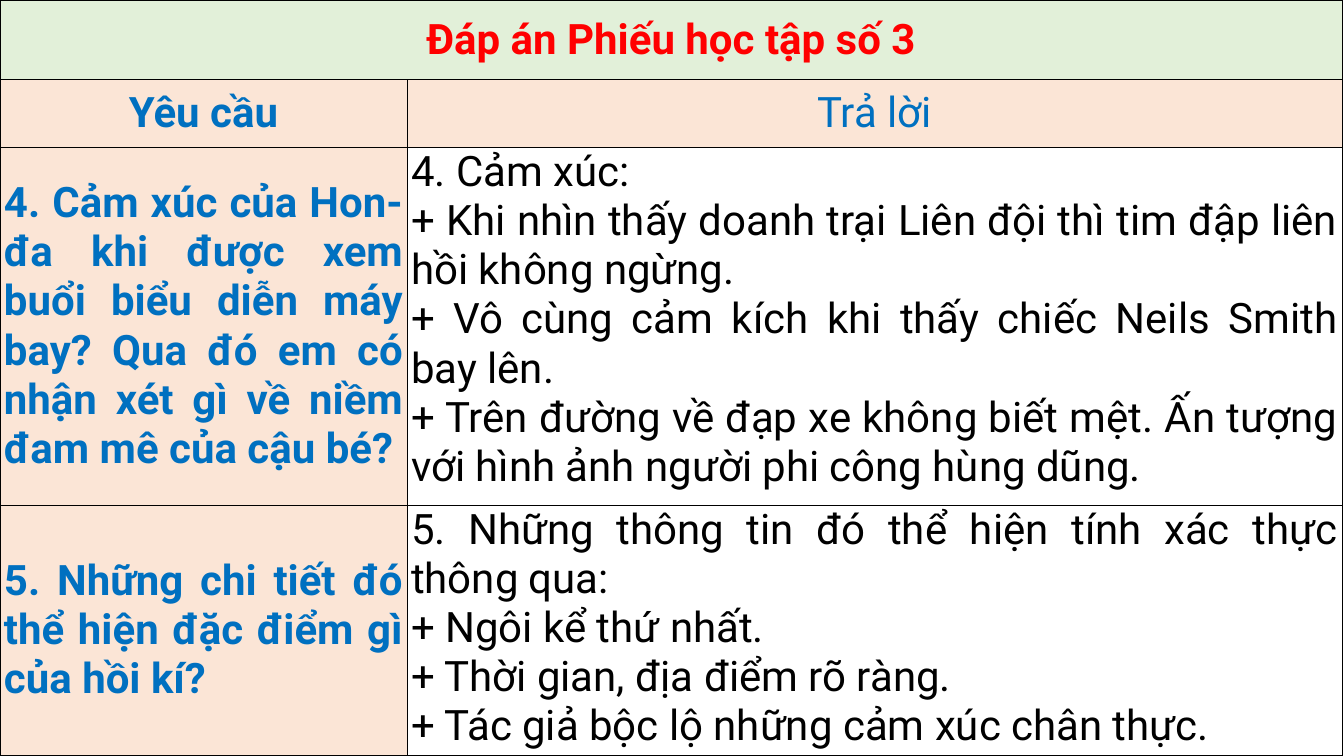
from pptx import Presentation
from pptx.dml.color import RGBColor
from pptx.enum.text import MSO_ANCHOR as ANCHOR, PP_ALIGN as ALIGN
from pptx.oxml import parse_xml
from pptx.oxml.ns import nsdecls
from pptx.util import Cm, Pt

RED, BLUE, BLACK, WHITE = "FF0000", "0070C0", "000000", "FFFFFF"
GREEN_FILL, PEACH_FILL = "E2F0D9", "FBE5D6"

# Cell formats: fill, font colour, bold, alignment, anchor
TITLE = (GREEN_FILL, RED, True, ALIGN.CENTER, ANCHOR.MIDDLE)
HEAD_LEFT = (PEACH_FILL, BLUE, True, ALIGN.CENTER, ANCHOR.MIDDLE)
HEAD_RIGHT = (PEACH_FILL, BLUE, False, ALIGN.CENTER, ANCHOR.MIDDLE)
QUESTION = (PEACH_FILL, BLUE, True, ALIGN.JUSTIFY, ANCHOR.MIDDLE)
ANSWER = (WHITE, BLACK, False, ALIGN.JUSTIFY, ANCHOR.TOP)

HEADING = "Đáp án Phiếu học tập số 3"
ROWS = [
    [(HEAD_LEFT, ["Yêu cầu"]), (HEAD_RIGHT, ["Trả lời"])],
    [(QUESTION, ["4. Cảm xúc của Hon-đa khi được xem buổi biểu diễn máy bay? "
                 "Qua đó em có nhận xét gì về niềm đam mê của cậu bé?"]),
     (ANSWER, ["4. Cảm xúc:",
               "+ Khi nhìn thấy doanh trại Liên đội thì tim đập liên hồi không ngừng.",
               "+ Vô cùng cảm kích khi thấy chiếc Neils Smith bay lên.",
               "+ Trên đường về đạp xe không biết mệt. Ấn tượng với hình ảnh "
               "người phi công hùng dũng."])],
    [(QUESTION, ["5. Những chi tiết đó thể hiện đặc điểm gì của hồi kí?"]),
     (ANSWER, ["5. Những thông tin đó thể hiện tính xác thực thông qua:",
               "+ Ngôi kể thứ nhất.",
               "+ Thời gian, địa điểm rõ ràng.",
               "+ Tác giả bộc lộ những cảm xúc chân thực."])],
]
COL_WIDTHS = [10.26, 23.57]
ROW_HEIGHTS = [2.01, 1.7, 9.02, 6.3]


def rgb(value):
    return RGBColor.from_string(value)


def add_borders(cell, color=BLACK, width=Pt(1)):
    tc_pr = cell._tc.get_or_add_tcPr()
    for i, side in enumerate("LRTB"):
        tc_pr.insert(i, parse_xml(
            f'<a:ln{side} {nsdecls("a")} w="{int(width)}"><a:solidFill>'
            f'<a:srgbClr val="{color}"/></a:solidFill></a:ln{side}>'))


def fill_cell(cell, style, lines):
    fill, color, bold, align, anchor = style
    cell.fill.solid()
    cell.fill.fore_color.rgb = rgb(fill)
    layout = {"margin_left": Cm(0.1), "margin_right": Cm(0.1),
              "margin_top": 0, "margin_bottom": 0, "vertical_anchor": anchor}
    for name, value in layout.items():
        setattr(cell, name, value)
    tf = cell.text_frame
    for i, line in enumerate(lines):
        p = tf.add_paragraph() if i else tf.paragraphs[0]
        p.alignment = align
        r = p.add_run()
        r.text = line
        for name, value in {"name": "Roboto", "size": Pt(30), "bold": bold}.items():
            setattr(r.font, name, value)
        r.font.color.rgb = rgb(color)


def add_answer_table(s, left, top):
    width, height = Cm(sum(COL_WIDTHS)), Cm(sum(ROW_HEIGHTS))
    table = s.shapes.add_table(len(ROW_HEIGHTS), len(COL_WIDTHS),
                               left, top, width, height).table
    table.first_row = table.horz_banding = False
    for col, w in zip(table.columns, COL_WIDTHS):
        col.width = Cm(w)
    for row, h in zip(table.rows, ROW_HEIGHTS):
        row.height = Cm(h)

    # Title row across both columns
    table.cell(0, 0).merge(table.cell(0, 1))
    fill_cell(table.cell(0, 0), TITLE, [HEADING])

    # Column heads, questions and answers
    for i, row in enumerate(ROWS, start=1):
        for j, (style, lines) in enumerate(row):
            fill_cell(table.cell(i, j), style, lines)

    for cell in table.iter_cells():
        add_borders(cell)


def main():
    prs = Presentation()
    prs.slide_width, prs.slide_height = Cm(33.87), Cm(19.05)
    s = prs.slides.add_slide(prs.slide_layouts[6])
    add_answer_table(s, Cm(0), Cm(0))
    prs.save("out.pptx")


if __name__ == "__main__":
    main()
